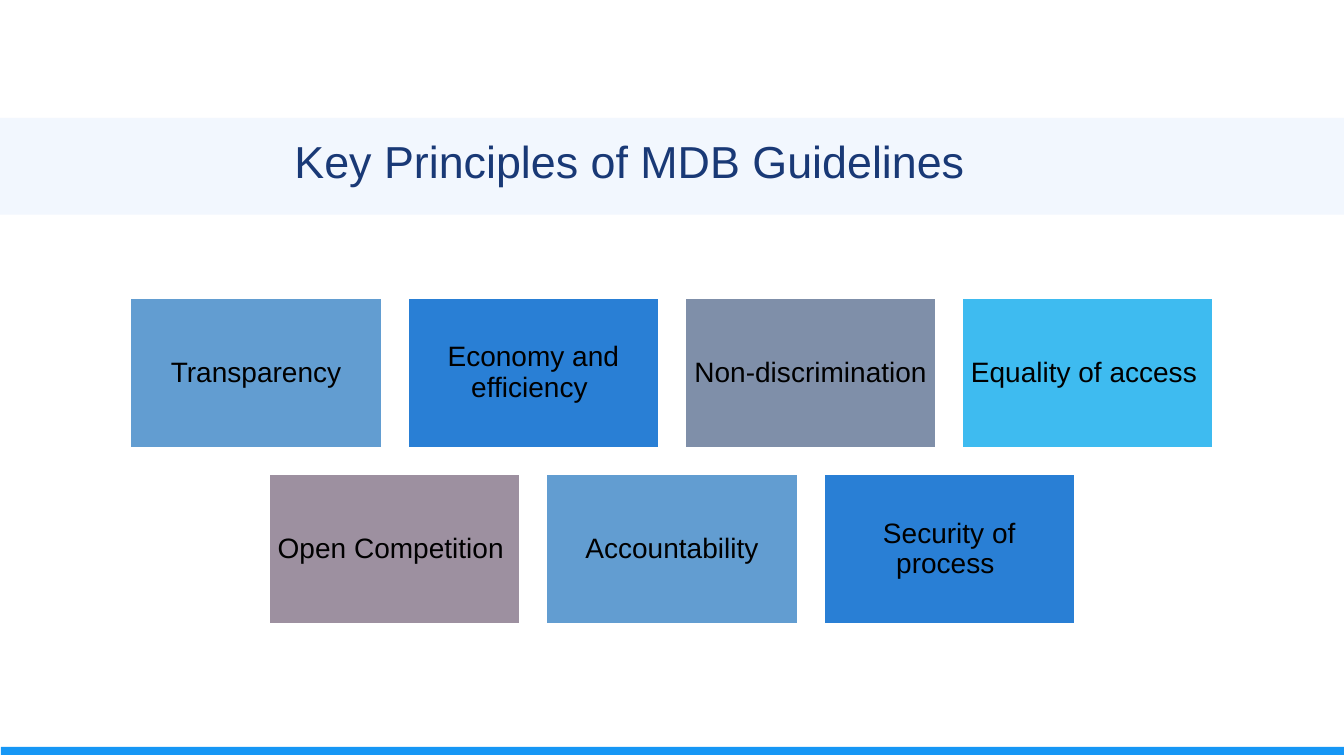
from lxml import etree
from pptx import Presentation
from pptx.dml.color import RGBColor
from pptx.enum.shapes import MSO_SHAPE
from pptx.enum.text import MSO_ANCHOR, MSO_AUTO_SIZE, PP_ALIGN
from pptx.oxml.ns import qn
from pptx.util import Inches, Pt

RECT = MSO_SHAPE.RECTANGLE
MIDDLE = MSO_ANCHOR.MIDDLE
LEFT, CENTER = PP_ALIGN.LEFT, PP_ALIGN.CENTER

WHITE = RGBColor(0xFF, 0xFF, 0xFF)
BLACK = RGBColor(0x00, 0x00, 0x00)
NAVY = RGBColor(0x00, 0x20, 0x60)
PALE = RGBColor(0xAC, 0xCB, 0xF9)
BRIGHT = RGBColor(0x16, 0x97, 0xF5)
STEEL = RGBColor(0x62, 0x9D, 0xD1)
BLUE = RGBColor(0x29, 0x7F, 0xD5)
SLATE = RGBColor(0x7F, 0x8F, 0xA9)
SKY = RGBColor(0x3E, 0xBB, 0xF0)
MAUVE = RGBColor(0x9D, 0x90, 0xA0)
CYCLE = [STEEL, BLUE, SLATE, SKY, MAUVE]

WIDE, HIGH = 13.33, 7.5
CARD_W, CARD_H, GAP, TOP = 2.5, 1.5, 0.25, 2.95
ROWS = [
    ["Transparency", "Economy and efficiency ", "Non-discrimination",
     "Equality of access "],
    ["Open Competition ", "Accountability", "Security of process "],
]

deck = Presentation()
deck.slide_width, deck.slide_height = Inches(WIDE), Inches(HIGH)
slide = deck.slides.add_slide(deck.slide_layouts[5])


def add_block(x, y, w, h, color):
    """Add a filled rectangle without outline, in inches."""
    block = slide.shapes.add_shape(
        RECT, Inches(x), Inches(y), Inches(w), Inches(h))
    block.shadow.inherit = False
    block.fill.solid()
    block.fill.fore_color.rgb = color
    block.line.fill.background()
    return block


# Footer strip and title band
add_block(0.01, 7.41, WIDE, 0.08, BRIGHT)
band = add_block(0, 1.17, WIDE, 0.96, PALE)
tint = band.fill._xPr.find(".//" + qn("a:srgbClr"))
etree.SubElement(tint, qn("a:alpha"), val="15000")

# Title
title = slide.shapes.title
title.left, title.top = Inches(2.82), Inches(1.3)
title.width, title.height = Inches(7.69), Inches(0.58)
frame = title.text_frame
frame.text = "Key Principles of MDB Guidelines"
frame.auto_size = MSO_AUTO_SIZE.NONE
frame.vertical_anchor = MIDDLE
head = frame.paragraphs[0]
head.alignment = LEFT
head.font.name, head.font.size = "Arial", Pt(32)
head.font.color.rgb = NAVY

# Cards, each row centred on the slide
count = 0
for row, names in enumerate(ROWS):
    span = len(names) * (CARD_W + GAP) - GAP
    start = (WIDE - span) / 2
    for col, name in enumerate(names):
        card = add_block(start + col * (CARD_W + GAP),
                         TOP + row * (CARD_H + GAP),
                         CARD_W, CARD_H, CYCLE[count % len(CYCLE)])
        count += 1
        card.line.color.rgb = WHITE
        card.line.width = Pt(2)
        frame = card.text_frame
        frame.word_wrap = True
        frame.vertical_anchor = MIDDLE
        frame.margin_left = frame.margin_right = Inches(0.08)
        frame.margin_top = frame.margin_bottom = Inches(0.08)
        frame.text = name
        label = frame.paragraphs[0]
        label.alignment = CENTER
        label.line_spacing = 0.9
        label.space_after = Pt(7)
        label.font.name, label.font.size = "Arial", Pt(20)
        label.font.color.rgb = BLACK

deck.save("out.pptx")
